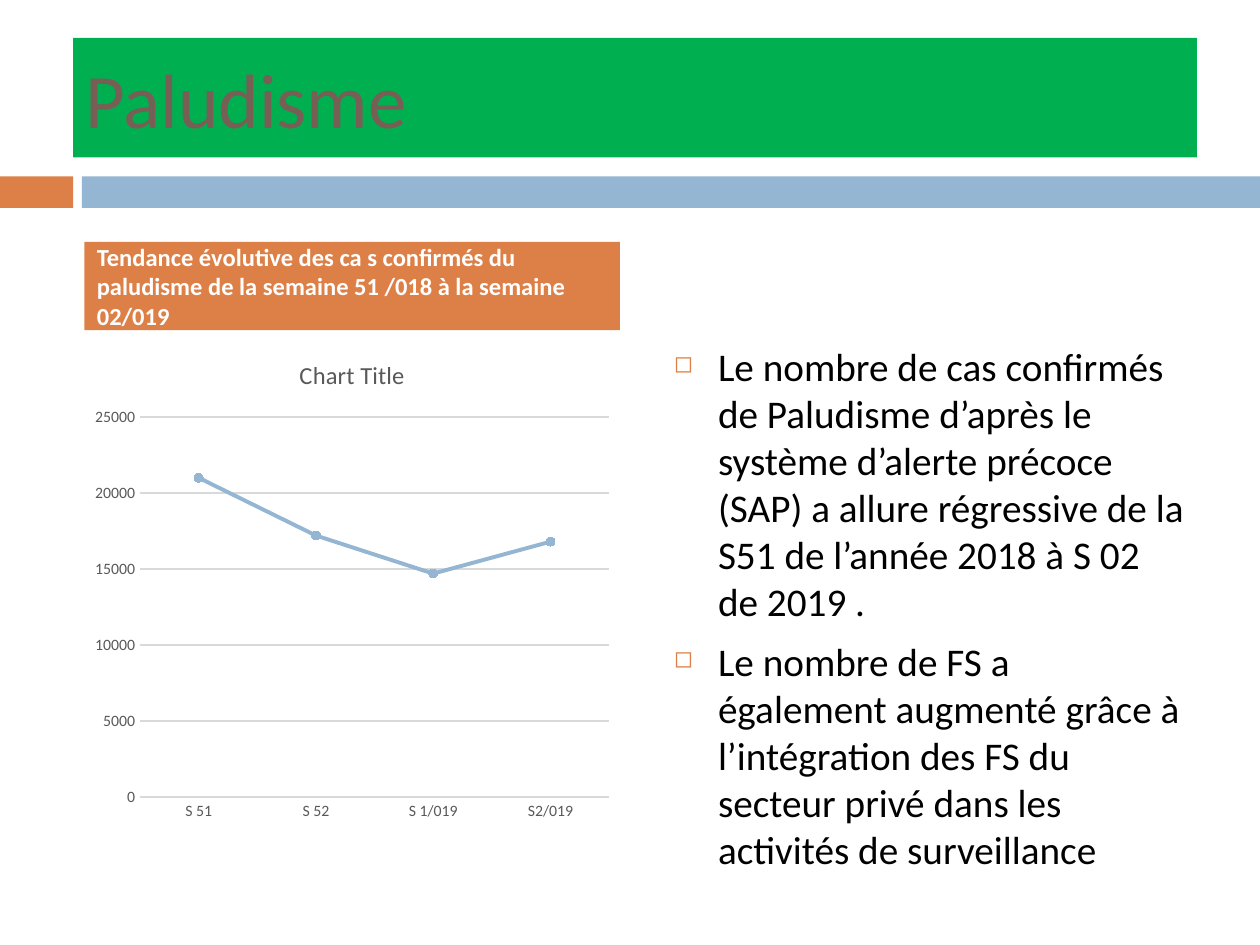
from lxml.etree import SubElement
from pptx import Presentation
from pptx.chart.data import CategoryChartData
from pptx.dml.color import RGBColor
from pptx.enum.chart import XL_CHART_TYPE as ChartType, XL_MARKER_STYLE as Marker, XL_TICK_MARK as Tick
from pptx.enum.shapes import MSO_SHAPE as Shape
from pptx.enum.text import MSO_ANCHOR as Anchor, PP_ALIGN as Align
from pptx.oxml.ns import qn
from pptx.util import Inches, Pt

ORANGE = RGBColor(0xDD, 0x80, 0x47)
BLUE = RGBColor(0x94, 0xB6, 0xD2)
GREEN = RGBColor(0x00, 0xB0, 0x50)
BROWN = RGBColor(0x77, 0x5F, 0x55)
GREY = RGBColor(0x59, 0x59, 0x59)
LIGHT_GREY = RGBColor(0xD9, 0xD9, 0xD9)
BLACK = RGBColor(0, 0, 0)
WHITE = RGBColor(0xFF, 0xFF, 0xFF)

LEFT_COLUMN, RIGHT_COLUMN, COLUMN_WIDTH = 0.67, 5.25, 4.25
CONTENT_TOP, CONTENT_HEIGHT = 2.67, 3.92

CAPTION = ("Tendance évolutive des ca s confirmés du paludisme "
           "de la semaine 51 /018 à la semaine 02/019")
FINDINGS = [
    "Le nombre de cas confirmés de Paludisme d’après le système d’alerte précoce (SAP) "
    "a allure régressive de la S51 de l’année 2018 à S 02 de 2019 .",
    "Le nombre de FS a également augmenté grâce à l’intégration des FS du secteur privé "
    "dans les activités de surveillance",
]
CONFIRMED_CASES = {"S 51": 21000, "S 52": 17200, "S 1/019": 14700, "S2/019": 16800}


def format_font(font, size, color, bold=False):
    values = {"name": "Calibri", "size": Pt(size), "bold": bold}
    for name, value in values.items():
        setattr(font, name, value)
    font.color.rgb = color


def add_paragraph_text(paragraph, text, size, color, bold=False):
    paragraph.alignment = Align.LEFT
    run = paragraph.add_run()
    run.text = text
    format_font(run.font, size, color, bold)


def add_band(slide, left, top, width, height, color):
    band = slide.shapes.add_shape(
        Shape.RECTANGLE, Inches(left), Inches(top), Inches(width), Inches(height))
    band.shadow.inherit = False
    band.fill.solid()
    band.fill.fore_color.rgb = color
    band.line.fill.background()
    return band


def set_title(slide, text):
    title = slide.shapes.title
    place = {"left": 0.58, "top": 0.3, "width": 8.92, "height": 0.95}
    for name, value in place.items():
        setattr(title, name, Inches(value))
    title.fill.solid()
    title.fill.fore_color.rgb = GREEN
    title.text_frame.vertical_anchor = Anchor.MIDDLE
    add_paragraph_text(title.text_frame.paragraphs[0], text, 44, BROWN)


def add_caption(slide, text):
    caption = add_band(slide, LEFT_COLUMN, 1.92, COLUMN_WIDTH, 0.7, ORANGE)
    frame = caption.text_frame
    frame.word_wrap = True
    frame.vertical_anchor = Anchor.MIDDLE
    paragraph = frame.paragraphs[0]
    paragraph.space_before = Pt(7)
    add_paragraph_text(paragraph, text, 14, WHITE, bold=True)


def set_bullet(paragraph):
    """Give the paragraph a small orange square with a hanging indent."""
    properties = paragraph._p.get_or_add_pPr()
    properties.set("marL", str(Inches(0.35)))
    properties.set("indent", str(Inches(-0.35)))
    color = SubElement(properties, qn("a:buClr"))
    SubElement(color, qn("a:srgbClr"), val=str(ORANGE))
    SubElement(properties, qn("a:buSzPct"), val="60000")
    SubElement(properties, qn("a:buChar"), char="◻")


def add_findings(slide, findings):
    box = slide.shapes.add_textbox(Inches(RIGHT_COLUMN), Inches(CONTENT_TOP),
                                   Inches(COLUMN_WIDTH), Inches(CONTENT_HEIGHT))
    frame = box.text_frame
    frame.word_wrap = True
    for index, finding in enumerate(findings):
        paragraph = frame.add_paragraph() if index else frame.paragraphs[0]
        paragraph.space_before = Pt(7)
        set_bullet(paragraph)
        add_paragraph_text(paragraph, finding, 22.4, BLACK)


def format_line(line, color, width):
    line.color.rgb = color
    line.width = Pt(width)


def add_trend_chart(slide, cases):
    data = CategoryChartData()
    data.categories = list(cases)
    data.add_series("Series 1", list(cases.values()))
    chart = slide.shapes.add_chart(
        ChartType.LINE_MARKERS, Inches(LEFT_COLUMN), Inches(CONTENT_TOP),
        Inches(COLUMN_WIDTH), Inches(CONTENT_HEIGHT), data).chart
    format_font(chart.font, 10, BLACK)
    chart.has_legend = False
    chart.has_title = True
    add_paragraph_text(chart.chart_title.text_frame.paragraphs[0], "Chart Title", 14, GREY)
    chart.chart_title.include_in_layout = False

    for axis in (chart.category_axis, chart.value_axis):
        axis.major_tick_mark = axis.minor_tick_mark = Tick.NONE
        format_font(axis.tick_labels.font, 9, GREY)
    format_line(chart.category_axis.format.line, LIGHT_GREY, 0.75)
    value_axis = chart.value_axis
    for name, value in {"minimum_scale": 0, "maximum_scale": 25000, "major_unit": 5000}.items():
        setattr(value_axis, name, value)
    value_axis.format.line.fill.background()
    format_line(value_axis.major_gridlines.format.line, LIGHT_GREY, 0.75)

    plot = chart.plots[0]
    plot.vary_by_categories = False
    trend = plot.series[0]
    trend.smooth = False
    format_line(trend.format.line, BLUE, 2.25)
    trend.marker.style = Marker.CIRCLE
    trend.marker.size = 5
    trend.marker.format.fill.solid()
    trend.marker.format.fill.fore_color.rgb = BLUE
    format_line(trend.marker.format.line, BLUE, 0.75)


def main():
    deck = Presentation()
    deck.slide_width, deck.slide_height = Inches(10), Inches(7.5)
    slide = deck.slides.add_slide(deck.slide_layouts[5])
    add_band(slide, 0, 1.4, 0.58, 0.25, ORANGE)
    add_band(slide, 0.65, 1.4, 9.35, 0.25, BLUE)
    set_title(slide, "Paludisme")
    add_findings(slide, FINDINGS)
    add_caption(slide, CAPTION)
    add_trend_chart(slide, CONFIRMED_CASES)
    deck.save("out.pptx")


if __name__ == "__main__":
    main()
